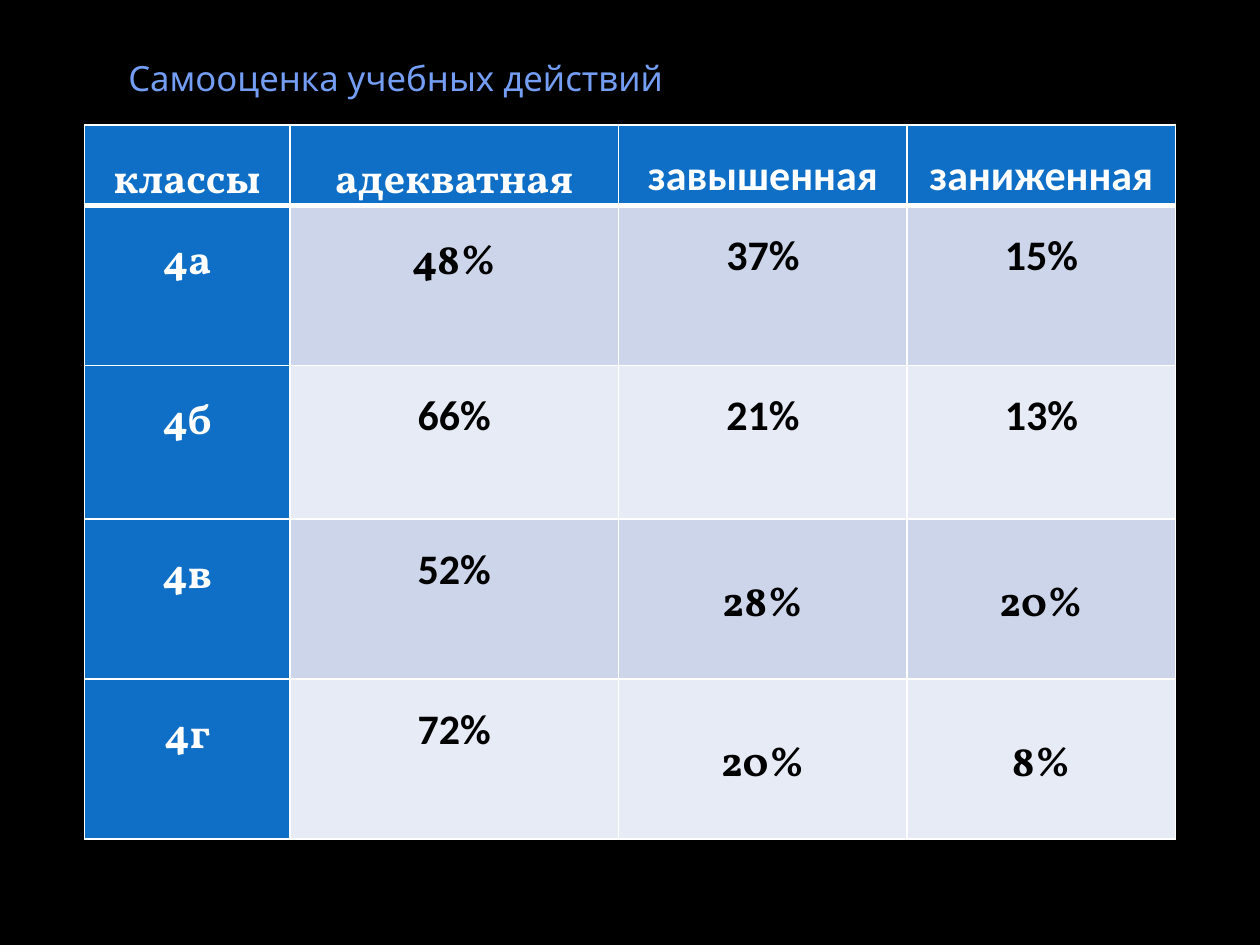
from lxml import etree
from pptx import Presentation
from pptx import util as u
from pptx.dml.color import RGBColor
from pptx.enum import text
from pptx.oxml import ns

# Content
TITLE = "Самооценка учебных действий"
ROWS = [
    ["классы", "адекватная", "завышенная", "заниженная"],
    ["4а", "48%", "37%", "15%"],
    ["4б", "66%", "21%", "13%"],
    ["4в", "52%", "28%", "20%"],
    ["4г", "72%", "20%", "8%"],
]
LOW = {(3, 2), (3, 3), (4, 2), (4, 3)}  # cells whose text sits one line lower
SERIF = LOW | {(0, 1), (1, 1)} | {(r, 0) for r in range(len(ROWS))}

# Theme and grid
THEME = dict(back="000000", title="749DF4", head="0F6FC6", light="FFFFFF",
             dark="000000", bands=("E7EBF5", "CCD5EA"), serif="Vollkorn",
             sans="Calibri", top="Noto Sans", big=24, small=19.8)
COLS = [1.63, 2.61, 2.29, 2.13]
HIGHS = [0.64, 1.27, 1.22, 1.27, 1.27]
LEFT, TOP = 0.67, 0.99
PAD, DROP = 0.06, 0.46


def rgb(name):
    return RGBColor.from_string(name)


def style(par, face, size, tint, bold=False):
    font = par.font
    font.name, font.size, font.bold = face, u.Pt(size), bold
    font.color.rgb = rgb(tint)


def edge(cell, row):
    """Draw white borders, thick between the header and the body."""
    props = cell._tc.get_or_add_tcPr()
    thick = {0: "lnB", 1: "lnT"}.get(row)
    for i, tag in enumerate(("lnL", "lnR", "lnT", "lnB")):
        line = etree.Element(ns.qn("a:" + tag), w=str(u.Pt(3 if tag == thick else 1)))
        fill = etree.SubElement(line, ns.qn("a:solidFill"))
        etree.SubElement(fill, ns.qn("a:srgbClr"), val=THEME["light"])
        props.insert(i, line)


def dress(cell, row, col):
    head = row == 0 or col == 0
    low = (row, col) in LOW
    cell.fill.solid()
    cell.fill.fore_color.rgb = rgb(THEME["head"] if head else THEME["bands"][row % 2])
    cell.margin_left = cell.margin_right = u.Inches(PAD)
    cell.margin_top = u.Inches(DROP if low else 0)
    cell.margin_bottom = 0
    cell.text = ROWS[row][col]
    par = cell.text_frame.paragraphs[0]
    par.alignment = text.PP_ALIGN.CENTER
    par.line_spacing = 1.0 if low else 1.5
    face = THEME["serif" if (row, col) in SERIF else "sans"]
    style(par, face, THEME["big"], THEME["light" if head else "dark"], True)
    edge(cell, row)


def main():
    deck = Presentation()
    deck.slide_width, deck.slide_height = u.Inches(10), u.Inches(7.5)
    slide = deck.slides.add_slide(deck.slide_layouts[6])
    slide.background.fill.solid()
    slide.background.fill.fore_color.rgb = rgb(THEME["back"])

    # Title
    box = slide.shapes.add_textbox(*map(u.Inches, (0.92, 0.44, 7.94, 0.39)))
    frame = box.text_frame
    frame.word_wrap = True
    frame.vertical_anchor = text.MSO_ANCHOR.BOTTOM
    frame.text = TITLE
    style(frame.paragraphs[0], THEME["top"], THEME["small"], THEME["title"])

    # Table
    area = map(u.Inches, (LEFT, TOP, sum(COLS), sum(HIGHS)))
    table = slide.shapes.add_table(len(ROWS), len(COLS), *area).table
    for col, wide in zip(table.columns, COLS):
        col.width = u.Inches(wide)
    for row, high in zip(table.rows, HIGHS):
        row.height = u.Inches(high)
    for r in range(len(ROWS)):
        for c in range(len(COLS)):
            dress(table.cell(r, c), r, c)

    deck.save("out.pptx")


if __name__ == "__main__":
    main()
